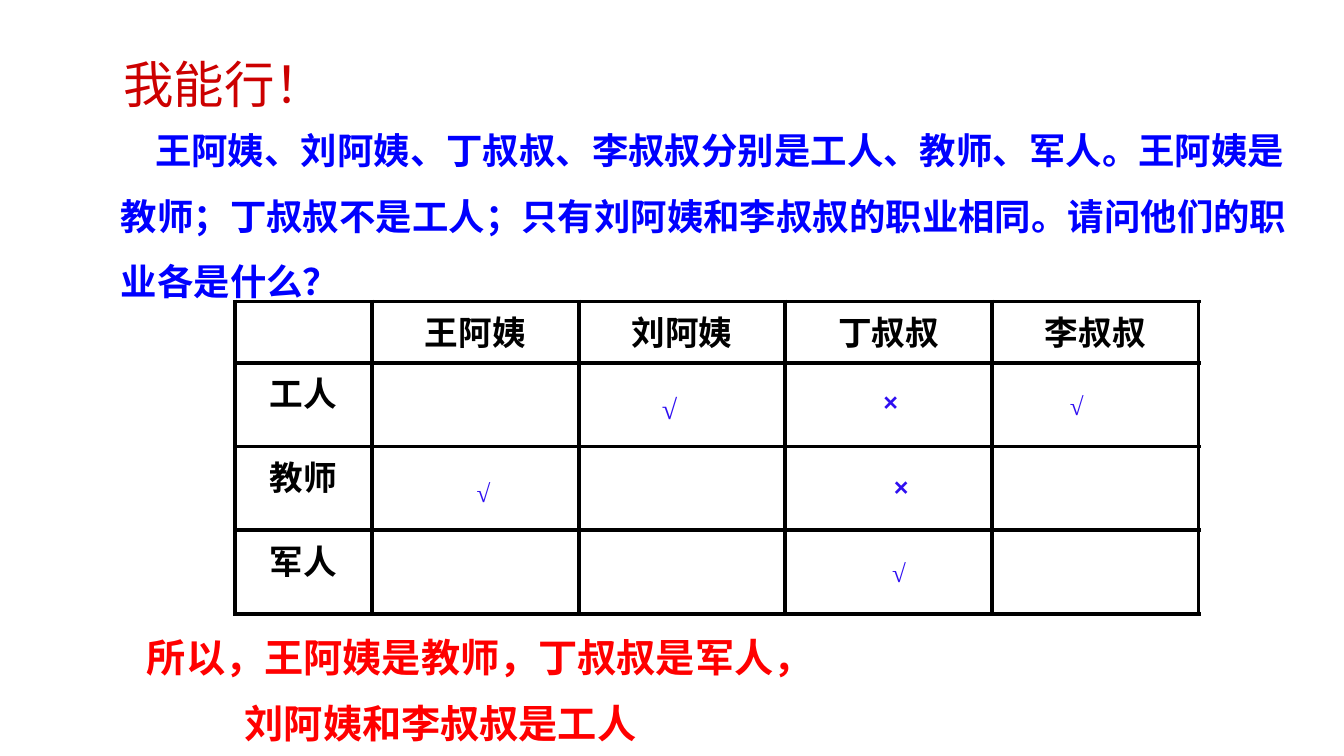
import pptx
import pptx.util
import pptx.dml.color
import pptx.enum.text
from lxml import etree
from pptx.oxml.ns import qn

TITLE = "我能行！"
PUZZLE = ("王阿姨、刘阿姨、丁叔叔、李叔叔分别是工人、教师、军人。王阿姨是教师；"
          "丁叔叔不是工人；只有刘阿姨和李叔叔的职业相同。请问他们的职业各是什么？")
ANSWER = ["所以，王阿姨是教师，丁叔叔是军人，", "刘阿姨和李叔叔是工人"]
PEOPLE = ["王阿姨", "刘阿姨", "丁叔叔", "李叔叔"]
JOBS = ["工人", "教师", "军人"]
# glyph style, person, job, share of the cell across and down
MARKS = [
    ("big_tick", 1, 0, 0.44, 0.28),
    ("tick", 3, 0, 0.41, 0.27),
    ("tick", 0, 1, 0.54, 0.31),
    ("cross", 2, 0, 0.51, 0.22),
    ("cross", 2, 1, 0.56, 0.24),
    ("tick", 2, 2, 0.55, 0.27),
]
GLYPHS = {"big_tick": "√", "tick": "√", "cross": "×"}

CJK = "Noto Sans CJK SC"
THEME = {
    "title": (36, CJK, "CC0000", False),
    "puzzle": (26, CJK, "0000FF", True),
    "table": (24, "Times New Roman", "000000", True),
    "answer": (28, "Calibri", "FF0000", True),
    "big_tick": (20, "Times New Roman", "2F0FF1", True),
    "tick": (18, "Times New Roman", "2F0FF1", True),
    "cross": (18, "Arial", "2F0FF1", True),
}
BORDER_COLOR, BORDER_PT = "000000", 3

SLIDE_W, SLIDE_H = 13.33, 7.5
TABLE_X, TABLE_Y = 2.33, 2.99
JOB_W, PERSON_W = 1.36, 2.05
HEAD_H, JOB_H = 0.61, 0.83
MARK_W, MARK_H = 1, 0.4

Inches, Pt = pptx.util.Inches, pptx.util.Pt
CENTER = pptx.enum.text.PP_ALIGN.CENTER


def style_runs(p, style):
    size, font, color, bold = THEME[style]
    for r in p.runs:
        r.font.size, r.font.name, r.font.bold = Pt(size), font, bold
        r.font.color.rgb = pptx.dml.color.RGBColor.from_string(color)
        ea = etree.SubElement(r.font._element, qn("a:ea"))
        ea.set("typeface", CJK)


def space_before(p, percent):
    p.space_before = Pt(0)
    spacing = p._p.pPr.find(qn("a:spcBef"))
    spacing.remove(spacing[0])
    etree.SubElement(spacing, qn("a:spcPct")).set("val", str(percent * 1000))


def add_text(slide, box, lines, style, align=None, before=0, spacing=None,
             indents=(0,), wrap=True):
    tf = slide.shapes.add_textbox(*map(Inches, box)).text_frame
    tf.word_wrap = wrap
    tf.text = "\n".join(lines)
    for p, indent in zip(tf.paragraphs, indents):
        p.alignment = align
        if spacing:
            p.line_spacing = spacing
        if before:
            space_before(p, before)
        if indent:
            p._p.get_or_add_pPr().set("indent", str(Inches(indent)))
        style_runs(p, style)


def format_cell(cell, text):
    cell.margin_left = cell.margin_right = Inches(0.13)
    cell.margin_top = cell.margin_bottom = Inches(0.05)
    tcPr = cell._tc.get_or_add_tcPr()
    for side in ("lnL", "lnR", "lnT", "lnB"):
        ln = etree.SubElement(tcPr, qn("a:" + side), w=str(Pt(BORDER_PT)))
        fill = etree.SubElement(ln, qn("a:solidFill"))
        etree.SubElement(fill, qn("a:srgbClr"), val=BORDER_COLOR)
    cell.fill.background()
    if text:
        p = cell.text_frame.paragraphs[0]
        p.text = text
        p.alignment = CENTER
        style_runs(p, "table")


def add_grid(slide):
    widths = [JOB_W] + [PERSON_W] * len(PEOPLE)
    heights = [HEAD_H] + [JOB_H] * len(JOBS)
    box = (TABLE_X, TABLE_Y, sum(widths), sum(heights))
    table = slide.shapes.add_table(len(heights), len(widths), *map(Inches, box)).table
    for column, width in zip(table.columns, widths):
        column.width = Inches(width)
    for row, height in zip(table.rows, heights):
        row.height = Inches(height)
    rows = [[""] + PEOPLE] + [[job] + [""] * len(PEOPLE) for job in JOBS]
    for i, row in enumerate(rows):
        for j, text in enumerate(row):
            format_cell(table.cell(i, j), text)


def add_mark(slide, style, person, job, across, down):
    x = TABLE_X + JOB_W + (person + across) * PERSON_W - MARK_W / 2
    y = TABLE_Y + HEAD_H + (job + down) * JOB_H
    add_text(slide, (x, y, MARK_W, MARK_H), [GLYPHS[style]], style, CENTER,
             before=20 if style == "cross" else 0)


def main():
    prs = pptx.Presentation()
    prs.slide_width, prs.slide_height = Inches(SLIDE_W), Inches(SLIDE_H)
    slide = prs.slides.add_slide(prs.slide_layouts[6])
    add_text(slide, (1.1, 1.01, 11.87, 1.97), [PUZZLE], "puzzle",
             before=50, spacing=1.5, indents=(0.34,))
    add_grid(slide)
    add_text(slide, (1.36, 6.23, 11.03, 1.27), ANSWER, "answer",
             before=50, indents=(0, 0.97))
    add_text(slide, (0.89, 0.48, 2.67, 0.5), [TITLE], "title", CENTER, wrap=False)
    for mark in MARKS:
        add_mark(slide, *mark)
    prs.save("out.pptx")


if __name__ == "__main__":
    main()
